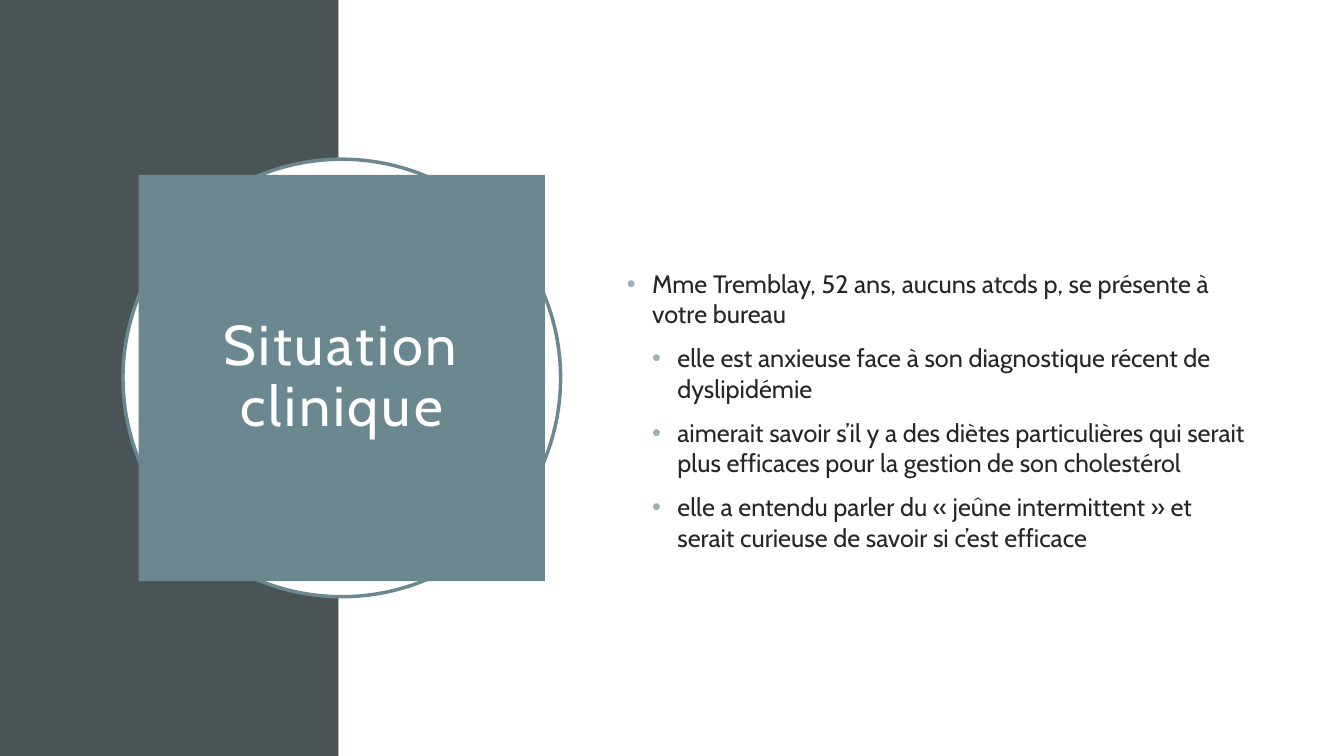
import pptx
import pptx.util
import pptx.dml.color
import pptx.enum.shapes
import pptx.enum.text
import pptx.oxml
import pptx.oxml.ns

Inches = pptx.util.Inches
Pt = pptx.util.Pt
RGBColor = pptx.dml.color.RGBColor
Shape = pptx.enum.shapes.MSO_SHAPE
Align = pptx.enum.text.PP_ALIGN

SLATE = RGBColor(0x4A, 0x53, 0x56)
TEAL = RGBColor(0x6B, 0x88, 0x91)
PALE_TEAL = RGBColor(0x9B, 0xAF, 0xB5)
INK = RGBColor(0x26, 0x26, 0x26)
WHITE = RGBColor(0xFF, 0xFF, 0xFF)

WIDTH, HEIGHT = 13.33, 7.5
BAND_WIDTH = 3.36
BADGE_CENTER = (3.39, 3.75)
RING_SIZE, SQUARE_SIZE = 4.34, 4.03
INDENT = 0.25

SITUATION = [
    (0, "Mme Tremblay, 52 ans, aucuns atcds p, se présente à votre bureau"),
    (1, "elle est anxieuse face à son diagnostique récent de dyslipidémie"),
    (1, "aimerait savoir s’il y a des diètes particulières qui serait "
        "plus efficaces pour la gestion de son cholestérol"),
    (1, "elle a entendu parler du « jeûne intermittent » et "
        "serait curieuse de savoir si c’est efficace"),
]


def write(paragraph, text, *, size, color, font, align=Align.LEFT,
          line_spacing=1.0, before=0, tracking=0):
    """Add text as one run; tracking is the letter spacing in points."""
    paragraph.alignment = align
    paragraph.line_spacing = line_spacing
    paragraph.space_before = Pt(before)
    run = paragraph.add_run()
    run.text = text
    run.font.name = font
    run.font.size = Pt(size)
    run.font.color.rgb = color
    if tracking:
        run.font._element.set("spc", str(tracking * 100))


def add_bullet(paragraph, level, color):
    paragraph.level = level
    properties = paragraph._p.get_or_add_pPr()
    properties.set("marL", str(Inches(INDENT * (level + 1))))
    properties.set("indent", str(-Inches(INDENT)))
    namespace = pptx.oxml.ns.nsdecls("a")
    for xml in (
        f'<a:buClr {namespace}><a:srgbClr val="{color}"/></a:buClr>',
        f'<a:buFont {namespace} typeface="Arial"/>',
        f'<a:buChar {namespace} char="•"/>',
    ):
        properties.append(pptx.oxml.parse_xml(xml))


def centered_box(center, size):
    x, y = center
    return x - size / 2, y - size / 2, size, size


class SlideBuilder:
    font = "Cabin"

    def __init__(self, slide):
        self.slide = slide

    def shape(self, kind, box, fill, line=None, line_width=2.5):
        shape = self.slide.shapes.add_shape(kind, *map(Inches, box))
        shape.shadow.inherit = False
        shape.fill.solid()
        shape.fill.fore_color.rgb = fill
        if line is None:
            shape.line.fill.background()
        else:
            shape.line.color.rgb = line
            shape.line.width = Pt(line_width)
        return shape

    def title(self, shape, text):
        frame = shape.text_frame
        frame.word_wrap = True
        frame.vertical_anchor = pptx.enum.text.MSO_ANCHOR.MIDDLE
        frame.margin_left = frame.margin_right = Inches(0.2)
        frame.margin_top = frame.margin_bottom = Inches(0.2)
        write(frame.paragraphs[0], text, size=40, color=WHITE, font=self.font,
              align=Align.CENTER, line_spacing=0.9, tracking=2)

    def bullets(self, box, items):
        frame = self.slide.shapes.add_textbox(*map(Inches, box)).text_frame
        frame.word_wrap = True
        frame.vertical_anchor = pptx.enum.text.MSO_ANCHOR.MIDDLE
        for index, (level, text) in enumerate(items):
            paragraph = frame.add_paragraph() if index else frame.paragraphs[0]
            write(paragraph, text, size=18, color=INK, font=self.font, before=10)
            add_bullet(paragraph, level, PALE_TEAL)


def main():
    presentation = pptx.Presentation()
    presentation.slide_width = Inches(WIDTH)
    presentation.slide_height = Inches(HEIGHT)
    builder = SlideBuilder(
        presentation.slides.add_slide(presentation.slide_layouts[6]))

    builder.shape(Shape.RECTANGLE, (0, 0, BAND_WIDTH, HEIGHT), SLATE)
    builder.shape(Shape.RECTANGLE,
                  (BAND_WIDTH, 0, WIDTH - BAND_WIDTH, HEIGHT), WHITE)
    builder.shape(Shape.OVAL, centered_box(BADGE_CENTER, RING_SIZE),
                  WHITE, line=TEAL)
    title_square = builder.shape(
        Shape.RECTANGLE, centered_box(BADGE_CENTER, SQUARE_SIZE), TEAL)
    builder.title(title_square, "Situation clinique")
    builder.bullets((6.12, 1.53, 6.37, 5.08), SITUATION)

    presentation.save("out.pptx")


if __name__ == "__main__":
    main()
